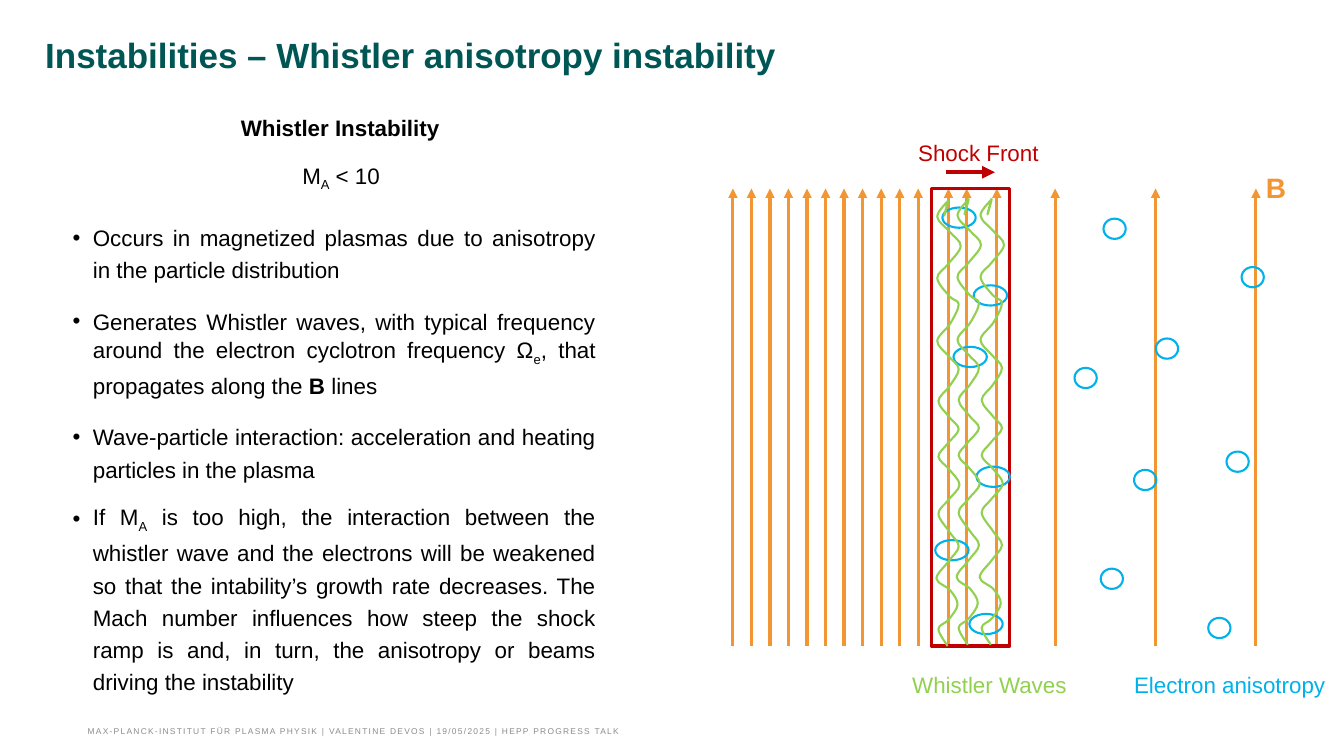
from dataclasses import dataclass

from lxml.etree import SubElement
from pptx import Presentation
from pptx.dml.color import RGBColor
from pptx.enum.shapes import MSO_CONNECTOR as Connector, MSO_SHAPE as Preset
from pptx.enum.text import MSO_ANCHOR as Anchor, MSO_AUTO_SIZE as AutoSize, PP_ALIGN as Align
from pptx.oxml.ns import qn
from pptx.util import Cm, Pt


@dataclass(frozen=True)
class Theme:
    font: str = "Arial"
    title: str = "005555"
    text: str = "000000"
    field: str = "F29633"
    shock: str = "C00000"
    electron: str = "00B1EA"
    wave: str = "92D050"
    footer: str = "8C8C8C"
    title_size: float = 25
    body_size: float = 16
    field_size: float = 20
    footer_size: float = 6
    leading: float = 23
    bullet_gap: float = 13.8


THEME = Theme()

FIELD_TOP, FIELD_BOTTOM = 4.75, 16.28
DENSE_FIELD = [18.47 + 0.467 * step for step in range(11)]
SHOCK_FIELD = [23.9, 24.36, 25.12]
SPARSE_FIELD = [26.59 + 2.53 * step for step in range(3)]

# Left and top of each electron orbit, in cm
ROUND_ORBITS = [(27.81, 5.51), (30.45, 15.57), (27.08, 9.27), (29.13, 8.53),
                (27.74, 14.33), (30.91, 11.38), (31.29, 6.73), (28.58, 11.84)]
STRETCHED_ORBITS = [(23.75, 5.23), (24.54, 7.19), (24.03, 8.74),
                    (24.61, 11.76), (23.57, 13.61), (24.43, 15.47)]

# Points the first whistler wave passes through, from the bottom up
WAVE_POINTS = [
    (23.88, 16.28), (23.65, 15.85), (23.9, 15.62), (24.13, 15.24), (23.95, 14.88),
    (23.6, 14.58), (23.9, 14.15), (24.16, 13.77), (23.93, 13.41), (23.65, 12.95),
    (23.9, 12.6), (24.18, 12.22), (23.93, 11.84), (23.65, 11.51), (23.88, 11.18),
    (24.16, 10.82), (23.93, 10.52), (23.65, 10.11), (23.93, 9.73), (24.16, 9.3),
    (23.9, 8.97), (23.62, 8.59), (23.95, 8.15), (24.16, 7.67), (23.93, 7.47),
    (23.62, 7.01), (23.9, 6.65), (24.21, 6.2), (23.93, 5.84), (23.62, 5.46), (23.9, 5.05)]
WAVE_HOOK = [(23.93, 4.98), (23.65, 5.97), (23.9, 5.03)]
WAVE_SHIFTS = [(0, 0), (0.51, -0.03), (1.09, -0.03)]

# Each text is a list of (words, style) spans
MACH_LIMIT = [("M", ""), ("A", "sub"), (" < 10", "")]
BULLETS = [
    [("Occurs in magnetized plasmas due to anisotropy in the particle distribution", "")],
    [("Generates Whistler waves, with typical frequency around the electron cyclotron "
      "frequency Ω", ""), ("e", "sub"), (", that propagates along the ", ""),
     ("B", "bold"), (" lines", "")],
    [("Wave-particle interaction: acceleration and heating particles in the plasma", "")],
    [("If M", ""), ("A", "sub"),
     (" is too high, the interaction between the whistler wave and the electrons will be "
      "weakened so that the intability’s growth rate decreases. The Mach number influences "
      "how steep the shock ramp is and, in turn, the anisotropy or beams driving the "
      "instability", "")],
]


def write(box, paragraphs, color=THEME.text, size=THEME.body_size, bold=False, wrap=True,
          align=Align.LEFT, leading=Pt(THEME.leading), bullet=False, tracking=0):
    """Fill a box with paragraphs, each a list of (words, style) spans."""
    frame = box.text_frame
    frame.margin_left = frame.margin_top = frame.margin_right = frame.margin_bottom = 0
    frame.word_wrap = wrap
    frame.auto_size = AutoSize.NONE if wrap else AutoSize.SHAPE_TO_FIT_TEXT
    frame.vertical_anchor = Anchor.TOP
    for index, spans in enumerate(paragraphs):
        para = frame.add_paragraph() if index else frame.paragraphs[0]
        if bullet:
            add_bullet(para)
        para.alignment = align
        para.line_spacing = leading
        para.space_before = Pt(THEME.bullet_gap if index else 0)
        for words, style in spans:
            span = para.add_run()
            span.text = words
            span.font.name = THEME.font
            span.font.size = Pt(size)
            span.font.bold = bold or style == "bold"
            span.font.color.rgb = RGBColor.from_string(color)
            properties = span._r.get_or_add_rPr()
            if style == "sub":
                properties.set("baseline", "-25000")
            if tracking:
                properties.set("spc", str(tracking))


def add_bullet(para):
    properties = para._p.get_or_add_pPr()
    properties.set("marL", str(Cm(0.51)))
    properties.set("indent", str(-Cm(0.51)))
    SubElement(properties, qn("a:buFont"), typeface=THEME.font)
    SubElement(properties, qn("a:buChar"), char="•")


def place(box, left, top, width, height):
    box.left, box.top, box.width, box.height = map(Cm, (left, top, width, height))
    return box


def add_label(page, spans, left, top, width, height=0.74, **text_format):
    box = page.shapes.add_textbox(Cm(left), Cm(top), Cm(width), Cm(height))
    write(box, [spans], **text_format)


def add_arrow(page, start, end, color, weight, arrow_at):
    arrow = page.shapes.add_connector(Connector.STRAIGHT, *map(Cm, start + end))
    arrow.line.color.rgb = RGBColor.from_string(color)
    arrow.line.width = Pt(weight)
    SubElement(arrow.line._get_or_add_ln(), qn(f"a:{arrow_at}"), type="triangle")
    SubElement(arrow._element.spPr, qn("a:effectLst"))


def outline(shape, color, weight):
    shape.shadow.inherit = False
    shape.fill.background()
    shape.line.color.rgb = RGBColor.from_string(color)
    shape.line.width = Pt(weight)


def add_outline(page, preset, left, top, width, height, color, weight):
    shape = page.shapes.add_shape(preset, *map(Cm, (left, top, width, height)))
    outline(shape, color, weight)


def smooth_path(points):
    """Return the points with two Bézier control points between each pair."""
    last = len(points) - 1
    slopes = []
    for index in range(last + 1):
        before, after = points[max(index - 1, 0)], points[min(index + 1, last)]
        slopes.append(((after[0] - before[0]) / 6, (after[1] - before[1]) / 6))
    path = [points[0]]
    for index in range(last):
        (x1, y1), (x2, y2) = points[index:index + 2]
        (dx1, dy1), (dx2, dy2) = slopes[index:index + 2]
        path += [(x1 + dx1, y1 + dy1), (x2 - dx2, y2 - dy2), (x2, y2)]
    return path


def add_wave(page, shift_x, shift_y):
    points = [(Cm(x + shift_x), Cm(y + shift_y))
              for x, y in smooth_path(WAVE_POINTS) + WAVE_HOOK]
    builder = page.shapes.build_freeform(*points[0])
    builder.add_line_segments(points[1:], close=False)
    wave = builder.convert_to_shape()
    # Join every three straight steps into one cubic curve
    path = wave._element.find(".//" + qn("a:path"))
    steps = path.findall(qn("a:lnTo"))
    for first in range(0, len(steps), 3):
        curve = SubElement(path, qn("a:cubicBezTo"))
        for step in steps[first:first + 3]:
            curve.append(step[0])
            path.remove(step)
    outline(wave, THEME.wave, 1.5)


def add_text(page):
    title, body = page.placeholders
    write(place(title, 1.14, 0.97, 31.6, 1.24),
          [[("Instabilities – Whistler anisotropy instability", "")]],
          color=THEME.title, size=THEME.title_size, bold=True, leading=0.9)
    add_label(page, [("Whistler Instability", "")], 6.07, 2.74, 5.08, bold=True, wrap=False)
    add_label(page, MACH_LIMIT, 7.62, 4.04, 2.01, wrap=False)
    write(place(body, 1.83, 5.51, 13.18, 12), BULLETS, align=Align.JUSTIFY, bullet=True)
    add_label(page, [("MAX-PLANCK-INSTITUT FÜR PLASMA PHYSIK | VALENTINE DEVOS | 19/05/2025 | "
                      "HEPP PROGRESS TALK", "")], 2.21, 18.29, 27.64, 0.51,
              color=THEME.footer, size=THEME.footer_size, leading=1.0, tracking=90)


def add_diagram(page):
    # Magnetic field and shock front
    for x in DENSE_FIELD + SHOCK_FIELD + SPARSE_FIELD:
        add_arrow(page, (x, FIELD_TOP), (x, FIELD_BOTTOM), THEME.field, 2.25, "headEnd")
    add_arrow(page, (23.85, 4.34), (25.07, 4.34), THEME.shock, 3, "tailEnd")
    add_outline(page, Preset.RECTANGLE, 23.47, FIELD_TOP, 1.98, FIELD_BOTTOM - FIELD_TOP,
                THEME.shock, 2.25)
    # Electrons and whistler waves
    for orbits, width in ((ROUND_ORBITS, 0.56), (STRETCHED_ORBITS, 0.84)):
        for left, top in orbits:
            add_outline(page, Preset.OVAL, left, top, width, 0.51, THEME.electron, 1.5)
    for shift in WAVE_SHIFTS:
        add_wave(page, *shift)
    # Labels
    for words, left, top, width, color in (
            ("Shock Front", 23.14, 3.38, 3.07, THEME.shock),
            ("Whistler Waves", 22.99, 16.79, 3.94, THEME.wave),
            ("Electron anisotropy", 28.58, 16.79, 4.88, THEME.electron)):
        add_label(page, [(words, "")], left, top, width, color=color, wrap=False)
    add_label(page, [("B", "bold")], 31.9, 4.34, 0.51, 0.81, color=THEME.field,
              size=THEME.field_size, wrap=False)


def main():
    deck = Presentation()
    deck.slide_width, deck.slide_height = Cm(33.87), Cm(19.05)
    page = deck.slides.add_slide(deck.slide_layouts[1])
    add_text(page)
    add_diagram(page)
    deck.save("out.pptx")


if __name__ == "__main__":
    main()
